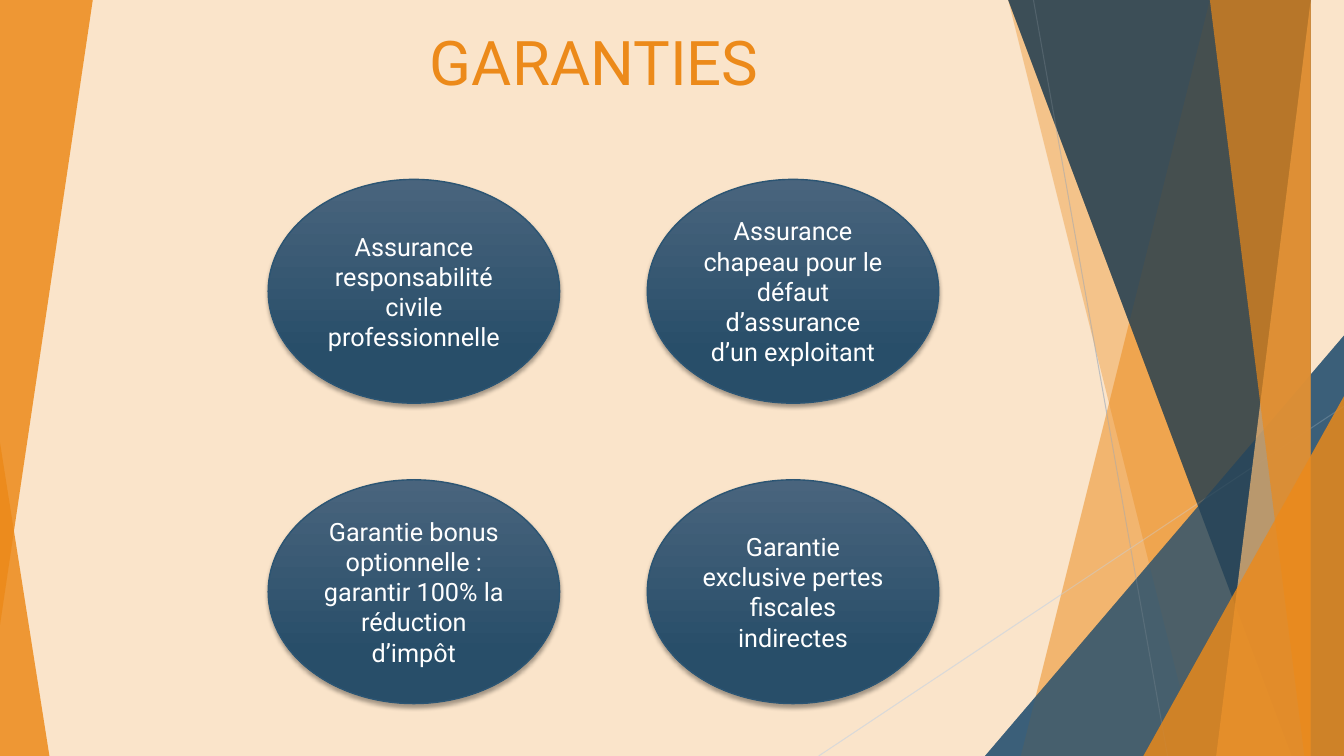
from itertools import product

from lxml.etree import SubElement
from pptx import Presentation
from pptx.dml.color import RGBColor
from pptx.enum.shapes import MSO_CONNECTOR, MSO_SHAPE
from pptx.enum.text import MSO_ANCHOR, PP_ALIGN
from pptx.oxml.ns import qn
from pptx.util import Inches, Pt

THEME = {
    "font": "Roboto", "title_size": 44, "body_size": 18,
    "cream": "FAE4CA", "orange": "EC8A1A", "peach": "F4B976",
    "blue": "2C5573", "navy": "214056",
    "oval_top": "49647D", "oval_bottom": "284E69",
    "white": "FFFFFF", "black": "000000", "grey": "BFBFBF", "light_grey": "D9D9D9",
}
WIDTH, HEIGHT = 13.33, 7.5
BLEED = -0.01  # the bands start just above the slide

deck = Presentation()
deck.slide_width, deck.slide_height = Inches(WIDTH), Inches(HEIGHT)
slide = deck.slides.add_slide(deck.slide_layouts[6])
slide.background.fill.solid()
slide.background.fill.fore_color.rgb = RGBColor.from_string(THEME["cream"])


def paint_glass(facet, color, opacity):
    """Give a facet a see-through fill, no outline and no shadow."""
    facet.shadow.inherit = False
    facet.line.fill.background()
    facet.fill.solid()
    facet.fill.fore_color.rgb = RGBColor.from_string(THEME[color])
    tint = facet.element.spPr.find(".//" + qn("a:srgbClr"))
    SubElement(tint, qn("a:alpha"), val=str(opacity * 1000))


def write_centred(frame, wording, size, color):
    frame.word_wrap = True
    paragraph = frame.paragraphs[0]
    paragraph.alignment = PP_ALIGN.CENTER
    run = paragraph.add_run()
    run.text = wording
    run.font.name = THEME["font"]
    run.font.size = Pt(THEME[size])
    run.font.color.rgb = RGBColor.from_string(THEME[color])


# Bands reach the right edge: x at the top, x at the bottom, colour, opacity.
# Wedges are triangles: left, top, width, height, apex, turn, colour, opacity.
right_facets = [
    (12.28, 10.04, "orange", 30),
    (10.5, 11.83, "orange", 20),
    (9.77, 3.33, 3.56, 4.17, 1, 0, "blue", 72),
    (10.21, 12.91, "navy", 70),
    (13.03, 11.92, "peach", 70),
    (11.96, 13.18, "orange", 65),
    (11.34, 3.93, 1.99, 3.57, 1, 0, "orange", 80),
]
lower_left_wedge = (0, 4.39, 0.49, 3.11, 0, 0, "orange", 85)
upper_left_wedge = (0, 0, 0.92, 6.2, 1, 180, "orange", 85)
hairlines = [
    (10.25, 0, 11.58, HEIGHT, "grey"),
    (WIDTH, 4.03, 8.12, HEIGHT, "light_grey"),
]

# The right-hand facets are layered twice, with the hairlines in between.
for left_wedge, rays in ((lower_left_wedge, []), (upper_left_wedge, hairlines)):
    for x1, y1, x2, y2, color in rays:
        ray = slide.shapes.add_connector(
            MSO_CONNECTOR.STRAIGHT, Inches(x1), Inches(y1), Inches(x2), Inches(y2))
        ray.line.color.rgb = RGBColor.from_string(THEME[color])
        ray.line.width = Pt(0.75)
        SubElement(ray.element.spPr, qn("a:effectLst"))
    for *geometry, color, opacity in right_facets + [left_wedge]:
        if len(geometry) == 2:
            top_x, bottom_x = geometry
            outline = slide.shapes.build_freeform(top_x, BLEED, scale=Inches(1))
            outline.add_line_segments(
                [(WIDTH, BLEED), (WIDTH, HEIGHT), (bottom_x, HEIGHT)], close=True)
            facet = outline.convert_to_shape()
        else:
            *box, apex, turn = geometry
            facet = slide.shapes.add_shape(
                MSO_SHAPE.ISOSCELES_TRIANGLE, *(Inches(length) for length in box))
            facet.adjustments[0] = apex
            facet.rotation = turn
        paint_glass(facet, color, opacity)

title = slide.shapes.add_textbox(Inches(1.65), 0, Inches(8.49), Inches(1.02))
title.text_frame.vertical_anchor = MSO_ANCHOR.BOTTOM
write_centred(title.text_frame, "GARANTIES", "title_size", "orange")

guarantees = [
    "Assurance responsabilité civile professionnelle",
    "Assurance chapeau pour le défaut d’assurance d’un exploitant",
    "Garantie bonus optionnelle : garantir 100% la réduction d’impôt",
    "Garantie exclusive pertes fiscales indirectes",
]
GRID_LEFT, GRID_TOP = 2.66, 1.78
COLUMN_STEP, ROW_STEP = 3.76, 2.98
OVAL_WIDTH, OVAL_HEIGHT = 2.89, 2.22

for (row, column), guarantee in zip(product(range(2), repeat=2), guarantees):
    oval = slide.shapes.add_shape(
        MSO_SHAPE.OVAL,
        Inches(GRID_LEFT + column * COLUMN_STEP), Inches(GRID_TOP + row * ROW_STEP),
        Inches(OVAL_WIDTH), Inches(OVAL_HEIGHT))
    oval.fill.gradient()
    oval.fill.gradient_angle = 270
    shades = ((0, "oval_top"), (0.78, "oval_bottom"))
    for stop, (position, color) in zip(oval.fill.gradient_stops, shades):
        stop.position = position
        stop.color.rgb = RGBColor.from_string(THEME[color])
    oval.line.color.rgb = RGBColor.from_string(THEME["blue"])
    oval.line.width = Pt(1)
    oval.shadow.inherit = False
    shadow = SubElement(
        oval.element.spPr.find(qn("a:effectLst")), qn("a:outerShdw"),
        blurRad=str(Pt(3)), dist=str(Pt(2)), dir="5400000", rotWithShape="0")
    shade = SubElement(shadow, qn("a:srgbClr"), val=THEME["black"])
    SubElement(shade, qn("a:alpha"), val="35000")
    oval.text_frame.vertical_anchor = MSO_ANCHOR.MIDDLE
    write_centred(oval.text_frame, guarantee, "body_size", "white")

deck.save("out.pptx")
